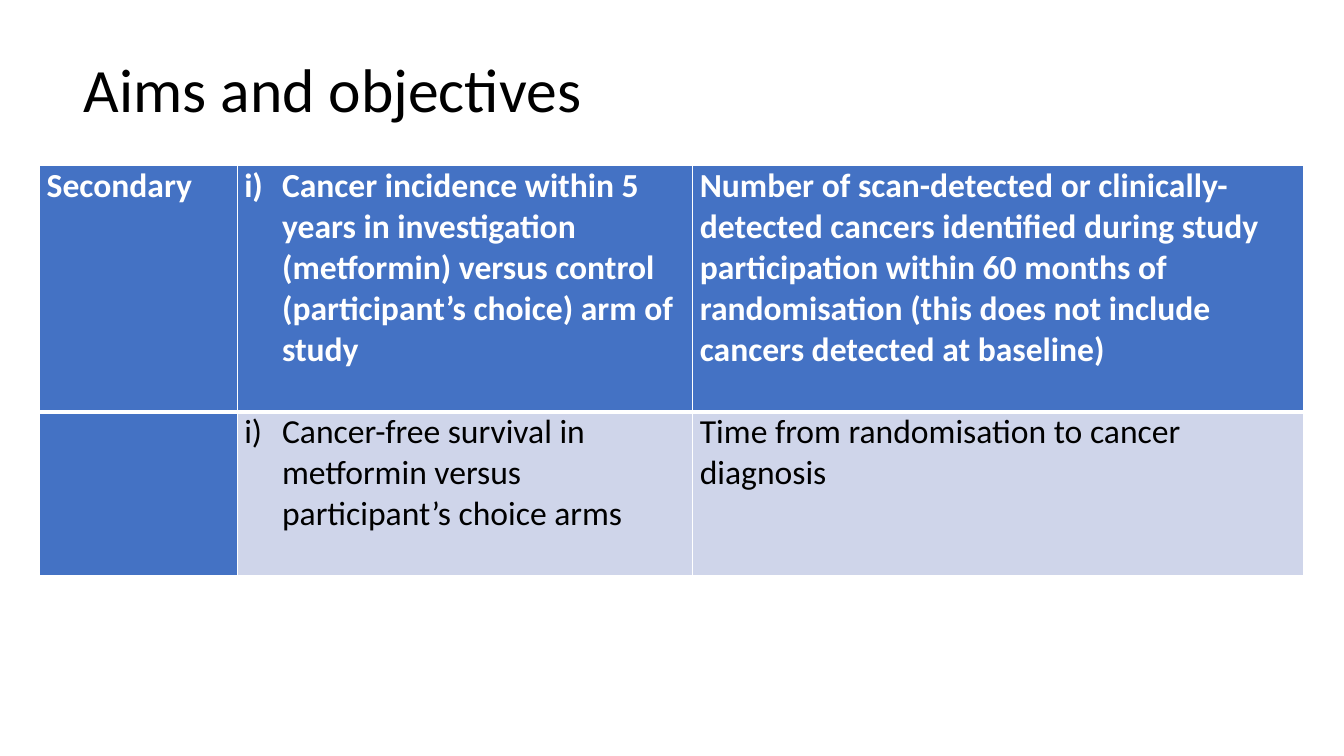
"""Build the slide listing the secondary aims and objectives of the study."""
import pptx
import pptx.dml.color
import pptx.enum.text
import pptx.oxml.ns
import pptx.util
from lxml import etree

Pt = pptx.util.Pt
COLORS = {"title": "000000", "head": "4472C4", "body": "CFD5EA",
          "light": "FFFFFF", "dark": "000000"}
COL_WIDTHS = [141.12, 325.44, 436.32]
ROW_HEIGHTS = [175.8, 116.8]
OBJECTIVES = [
    ["Secondary",
     "Cancer incidence within 5 years in investigation (metformin) versus control "
     "(participant’s choice) arm of study",
     "Number of scan-detected or clinically-detected cancers identified during study "
     "participation within 60 months of randomisation (this does not include cancers "
     "detected at baseline)"],
    ["",
     "Cancer-free survival in metformin versus participant’s choice arms",
     "Time from randomisation to cancer diagnosis"],
]


def rgb(name):
    return pptx.dml.color.RGBColor.from_string(COLORS[name])


def set_attrs(target, values):
    for name, value in values.items():
        setattr(target, name, value)


def add_element(parent, tag, **attrs):
    return etree.SubElement(parent, pptx.oxml.ns.qn(tag), attrs)


def write_text(p, text, size, color, bold=False):
    r = p.add_run()
    r.text = text
    set_attrs(r.font, {"name": "Calibri", "size": Pt(size), "bold": bold})
    r.font.color.rgb = rgb(color)


def add_title(s, text):
    sp = s.shapes.add_textbox(Pt(52.8), Pt(13.8), Pt(828), Pt(104.4))
    tf = sp.text_frame
    set_attrs(tf, {"word_wrap": True,
                   "vertical_anchor": pptx.enum.text.MSO_ANCHOR.MIDDLE})
    p = tf.paragraphs[0]
    p.line_spacing = 0.9
    write_text(p, text, 44, "title")


def set_borders(cell, widths):
    tc_pr = cell._tc.get_or_add_tcPr()
    for side, width in widths.items():
        ln = add_element(tc_pr, "a:ln" + side, w=str(Pt(width)))
        fill = add_element(ln, "a:solidFill")
        add_element(fill, "a:srgbClr", val=COLORS["light"])


def number_paragraph(p):
    p_pr = p._p.get_or_add_pPr()
    p_pr.set("marL", str(Pt(27)))
    p_pr.set("indent", str(-Pt(27)))
    add_element(p_pr, "a:buFont", typeface="+mj-lt")
    add_element(p_pr, "a:buAutoNum", type="romanLcParenR")


def format_cell(cell, text, row, col):
    header = row == 0
    set_attrs(cell, {"margin_left": Pt(5.1), "margin_right": Pt(5.1),
                     "margin_top": 0, "margin_bottom": 0})
    set_borders(cell, {"L": 1, "R": 1, "T": 1 if header else 3, "B": 3 if header else 1})
    cell.fill.solid()
    cell.fill.fore_color.rgb = rgb("head" if header or col == 0 else "body")
    p = cell.text_frame.paragraphs[0]
    if text:
        write_text(p, text, 24, "light" if header else "dark", header)
    if col == 1:
        number_paragraph(p)


def add_objectives_table(s, rows):
    frame = s.shapes.add_table(len(rows), len(COL_WIDTHS), Pt(28.3), Pt(118.3),
                               Pt(sum(COL_WIDTHS)), Pt(sum(ROW_HEIGHTS)))
    table = frame.table
    table.horz_banding = False
    for column, width in zip(table.columns, COL_WIDTHS):
        column.width = Pt(width)
    for i, texts in enumerate(rows):
        table.rows[i].height = Pt(ROW_HEIGHTS[i])
        for j, text in enumerate(texts):
            format_cell(table.cell(i, j), text, i, j)


def main():
    prs = pptx.Presentation()
    set_attrs(prs, {"slide_width": Pt(960), "slide_height": Pt(540)})
    s = prs.slides.add_slide(prs.slide_layouts[6])
    add_title(s, "Aims and objectives")
    add_objectives_table(s, OBJECTIVES)
    prs.save("out.pptx")


if __name__ == "__main__":
    main()
